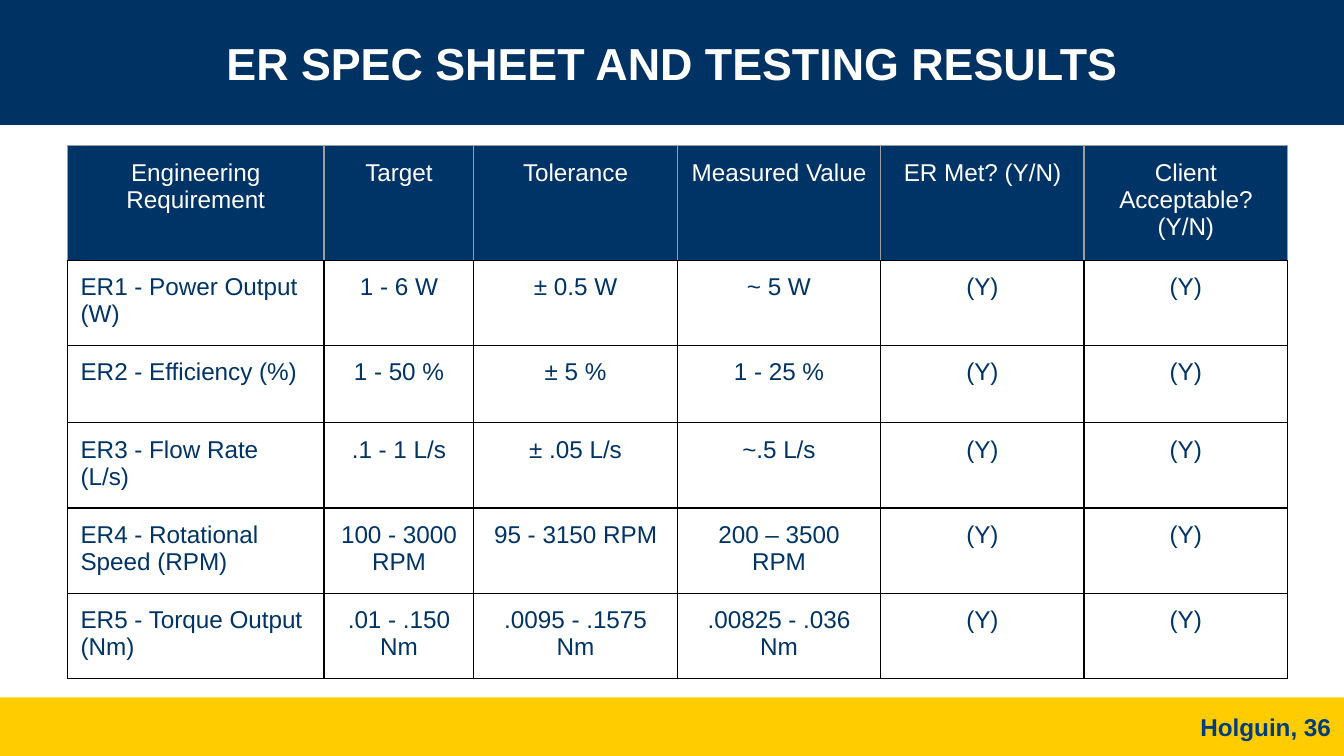
from dataclasses import dataclass

from lxml.etree import SubElement
from pptx import Presentation
from pptx.dml.color import RGBColor
from pptx.enum.shapes import MSO_SHAPE as Shape
from pptx.enum.text import MSO_ANCHOR as Anchor, MSO_AUTO_SIZE as AutoSize, PP_ALIGN as Align
from pptx.oxml.ns import qn
from pptx.util import Pt


@dataclass(frozen=True)
class Theme:
    font: str = "Arial"
    banner: str = "003264"
    gold: str = "FFCC00"
    navy: str = "003466"
    footer: str = "003D7C"
    white: str = "FFFFFF"
    header_border: str = "9E9E9E"
    body_border: str = "000000"
    title_size: float = 24
    text_size: float = 13
    border_width: float = 0.75
    cell_margin: float = 7.2


HEADERS = ["Engineering Requirement", "Target", "Tolerance", "Measured Value",
           "ER Met? (Y/N)", "Client Acceptable? (Y/N)"]
RESULTS = [
    ["ER1 - Power Output (W)", "1 - 6 W", "± 0.5 W", "~ 5 W"],
    ["ER2 - Efficiency (%)", "1 - 50 %", "± 5 %", "1 - 25 %"],
    ["ER3 - Flow Rate (L/s)", ".1 - 1 L/s", "± .05 L/s", "~.5 L/s"],
    ["ER4 - Rotational Speed (RPM)", "100 - 3000 RPM", "95 - 3150 RPM", "200 – 3500 RPM"],
    ["ER5 - Torque Output (Nm)", ".01 - .150 Nm", ".0095 - .1575 Nm", ".00825 - .036 Nm"],
]
COLUMN_WIDTHS = [137.6, 80.2] + [109] * 4
ROW_HEIGHTS = [61.4, 45.5, 41.4] + [45.5] * 3


def write_text(frame, text, *, font, size, color, bold=False, align=Align.CENTER):
    frame.word_wrap = True
    paragraph = frame.paragraphs[0]
    paragraph.alignment = align
    run = paragraph.add_run()
    run.text = text
    run.font.name = font
    run.font.size = Pt(size)
    run.font.bold = bold
    run.font.color.rgb = RGBColor.from_string(color)


class SlideBuilder:
    """Draws styled elements on one slide, with lengths in points."""

    def __init__(self, slide, theme):
        self.slide = slide
        self.theme = theme

    def band(self, top, height, color):
        shape = self.slide.shapes.add_shape(Shape.RECTANGLE, 0, Pt(top), Pt(720), Pt(height))
        shape.shadow.inherit = False
        shape.fill.solid()
        shape.fill.fore_color.rgb = RGBColor.from_string(color)
        shape.line.fill.background()

    def title(self, text, left, top, width, height):
        shape = self.slide.shapes.title
        shape.left, shape.top, shape.width, shape.height = map(Pt, (left, top, width, height))
        shape.text_frame.auto_size = AutoSize.NONE
        shape.text_frame.vertical_anchor = Anchor.MIDDLE
        write_text(shape.text_frame, text, font=self.theme.font, size=self.theme.title_size,
                   color=self.theme.white, bold=True)
        self.slide.shapes.element.append(shape.element)

    def footer(self, text, left, top, width, height):
        shape = self.slide.shapes.add_textbox(*map(Pt, (left, top, width, height)))
        shape.text_frame.vertical_anchor = Anchor.MIDDLE
        write_text(shape.text_frame, text, font=self.theme.font, size=self.theme.text_size,
                   color=self.theme.footer, bold=True, align=Align.RIGHT)

    def table(self, rows, left, top, widths, heights):
        frame = self.slide.shapes.add_table(len(rows), len(widths), Pt(left), Pt(top),
                                            Pt(sum(widths)), Pt(sum(heights)))
        table = frame.table
        table.horz_banding = False
        for column, width in zip(table.columns, widths):
            column.width = Pt(width)
        for row, height in zip(table.rows, heights):
            row.height = Pt(height)
        for row_index, values in enumerate(rows):
            for column_index, text in enumerate(values):
                self.cell(table.cell(row_index, column_index), text,
                          is_header=row_index == 0, is_label=column_index == 0)

    def cell(self, cell, text, is_header, is_label):
        theme = self.theme
        margin = Pt(theme.cell_margin)
        cell.margin_left = cell.margin_right = cell.margin_top = cell.margin_bottom = margin
        side_color = theme.header_border if is_header else theme.body_border
        self.borders(cell, {"lnL": side_color, "lnR": side_color,
                            "lnT": side_color, "lnB": theme.body_border})
        cell.fill.solid()
        cell.fill.fore_color.rgb = RGBColor.from_string(theme.navy if is_header else theme.white)
        write_text(cell.text_frame, text, font=theme.font, size=theme.text_size,
                   color=theme.white if is_header else theme.navy,
                   align=Align.LEFT if is_label and not is_header else Align.CENTER)

    def borders(self, cell, colors):
        properties = cell._tc.get_or_add_tcPr()
        for side, color in colors.items():
            line = SubElement(properties, qn(f"a:{side}"), w=str(Pt(self.theme.border_width)))
            fill = SubElement(line, qn("a:solidFill"))
            SubElement(fill, qn("a:srgbClr"), val=color)


def main():
    presentation = Presentation()
    presentation.slide_width, presentation.slide_height = Pt(720), Pt(405)
    theme = Theme()
    builder = SlideBuilder(presentation.slides.add_slide(presentation.slide_layouts[5]), theme)
    builder.band(373.6, 31.4, theme.gold)
    builder.band(0, 67, theme.banner)
    builder.title("ER SPEC SHEET AND TESTING RESULTS", 30, 0, 660, 67)
    builder.footer("Holguin, 36", 630, 374, 90, 31)
    rows = [HEADERS] + [result + ["(Y)"] * 2 for result in RESULTS]
    builder.table(rows, 36, 78, COLUMN_WIDTHS, ROW_HEIGHTS)
    presentation.save("out.pptx")


if __name__ == "__main__":
    main()
